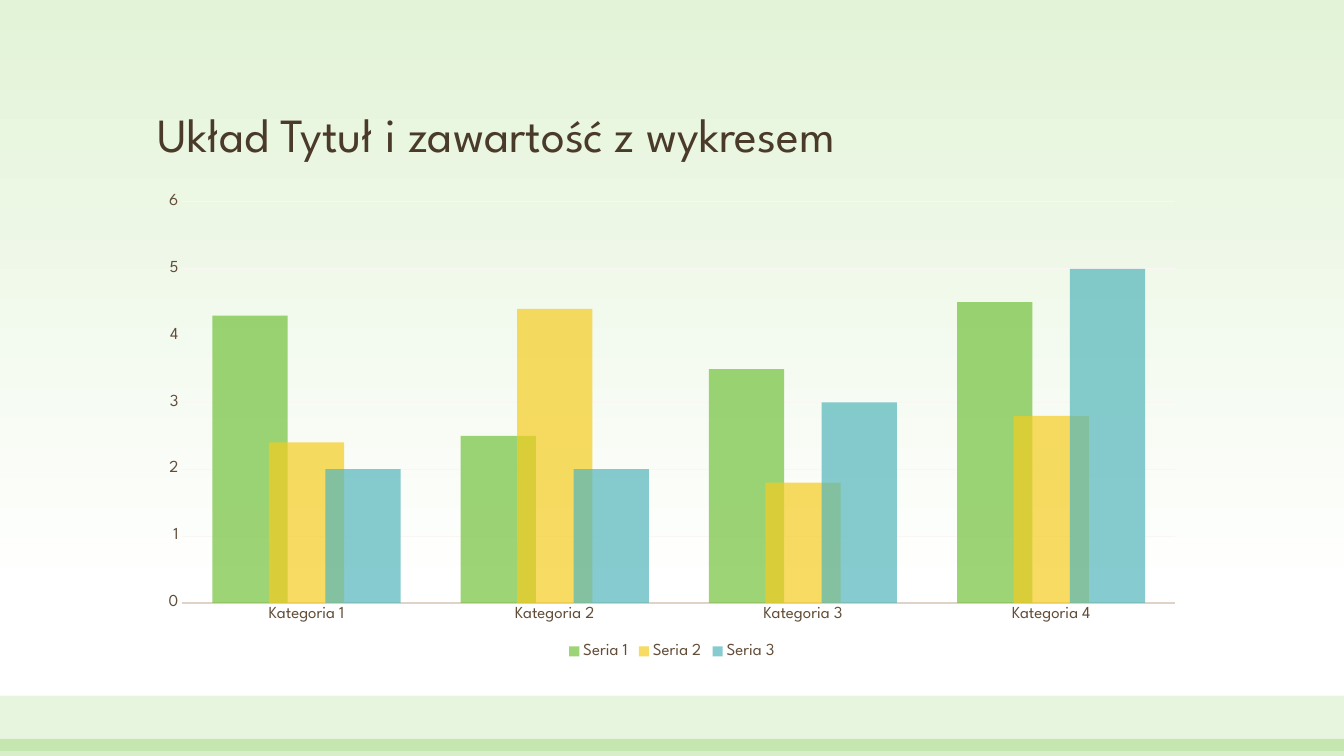
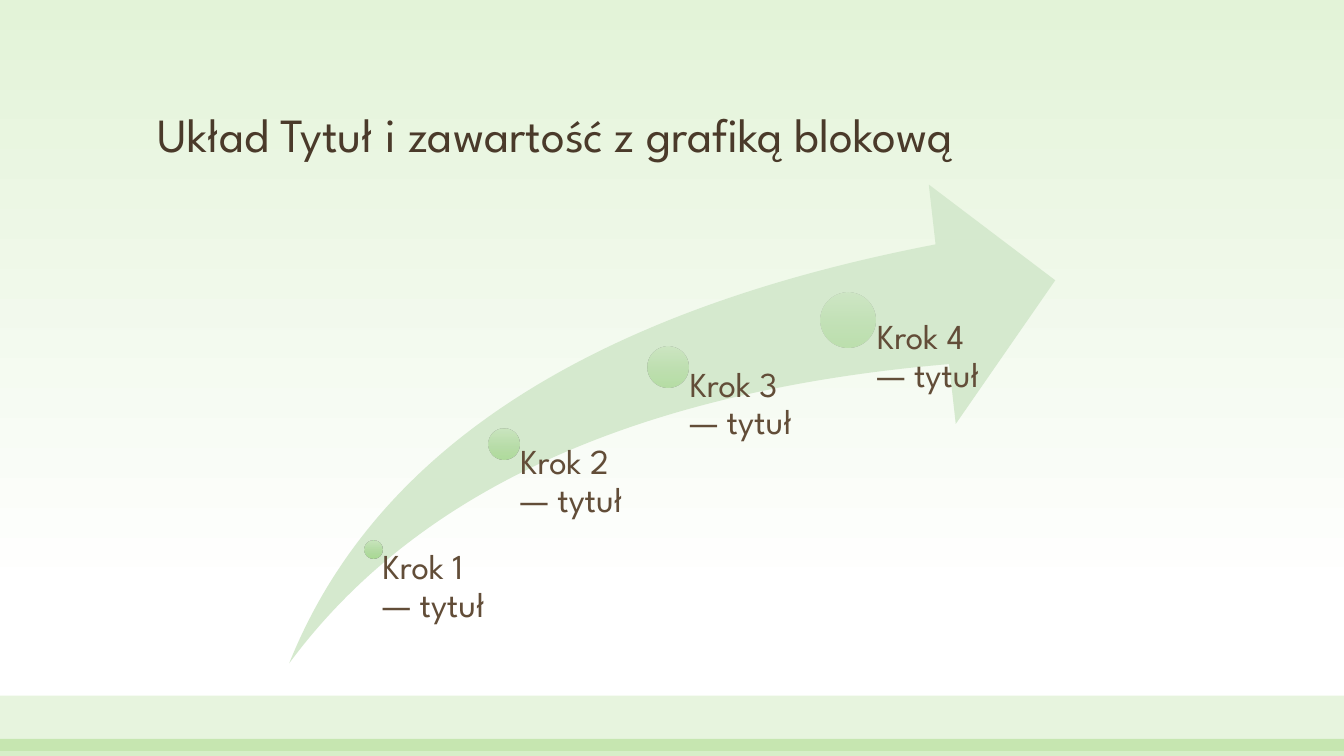
from lxml.etree import SubElement
from pptx import Presentation
from pptx.chart.data import CategoryChartData
from pptx.dml.color import RGBColor
from pptx.enum.chart import XL_CHART_TYPE as CHART, XL_LEGEND_POSITION as LEGEND, XL_TICK_MARK as TICK
from pptx.enum.shapes import MSO_SHAPE as SHAPE
from pptx.enum.text import MSO_ANCHOR as ANCHOR, PP_ALIGN as ALIGN
from pptx.oxml.ns import qn
from pptx.util import Pt

FONT = "League Spartan"
COLORS = {
    "title": "4A3A2A",
    "text": "624D38",
    "green": "72C23C",
    "yellow": "F4CC20",
    "teal": "53B6BB",
    "axis": "DFD2C6",
    "grid": "F9F6F4",
    "sky": "E3F3D8",
    "white": "FFFFFF",
    "arrow": "D5E9CE",
    "dot_top": "C8E5BC",
    "dot_middle": "B3DBA2",
    "dot_bottom": "A4D78D",
}
WIDTH, HEIGHT = 960, 540
LEFT, CONTENT_WIDTH = 105.5, 749
TOP, CONTENT_HEIGHT = 131.8, 342
BOTTOM = TOP + CONTENT_HEIGHT
LABEL_WIDTH = 78


def rgb(name):
    return RGBColor.from_string(COLORS[name])


def box(*lengths):
    return [Pt(n) for n in lengths]


def fade(element, opacity):
    """Give every RGB colour inside the element an opacity in percent."""
    for color in element.xpath(".//a:srgbClr"):
        SubElement(color, qn("a:alpha"), val=str(round(opacity * 1000)))


def fill_gradient(fill, element, stops):
    """Fill downwards; stops are (position, colour, opacity), in percent."""
    fill.gradient()
    fill.gradient_angle = 270
    gs_list = element.xpath(".//a:gradFill/a:gsLst")[0]
    for old in list(gs_list):
        gs_list.remove(old)
    for position, color, opacity in stops:
        gs = SubElement(gs_list, qn("a:gs"), pos=str(position * 1000))
        SubElement(gs, qn("a:srgbClr"), val=COLORS[color])
        fade(gs, opacity)


def write(tf, text, size=25, color="text", anchor=ANCHOR.TOP):
    tf.word_wrap = True
    tf.vertical_anchor = anchor
    p = tf.paragraphs[0]
    p.alignment = ALIGN.LEFT
    p.line_spacing = 0.9
    r = p.add_run()
    r.text = text
    style_font(r.font, size, color)


def style_font(font, size, color="text"):
    font.name = FONT
    font.size = Pt(size)
    font.bold = False
    font.color.rgb = rgb(color)


def add_shape(shapes, kind, lengths, color=None):
    sp = shapes.add_shape(kind, *box(*lengths))
    sp.shadow.inherit = False
    sp.line.fill.background()
    if color:
        sp.fill.solid()
        sp.fill.fore_color.rgb = rgb(color)
    return sp


def style_master(prs, layout):
    """Set the background and the title place for all slides."""
    master = prs.slide_master
    fill_gradient(master.background.fill, master.element,
                  [(0, "sky", 56), (79, "white", 100)])
    title = layout.placeholders[0]
    title.left, title.top, title.width, title.height = box(LEFT, 34.2, CONTENT_WIDTH, 85.7)


def add_bands(slide, master):
    """Draw the bands and move them to the master, behind its placeholders."""
    for i, (top, height, opacity) in enumerate([(496.8, 39.6, 17), (527.8, 12.2, 28)]):
        band = add_shape(slide.shapes, SHAPE.RECTANGLE, (0, top, WIDTH, height), "green")
        fade(band.element, opacity)
        band.element.nvSpPr.cNvPr.set("id", str(101 + i))
        master.shapes.element.insert(2 + i, band.element)


def add_slide(prs, layout, title):
    slide = prs.slides.add_slide(layout)
    write(slide.shapes.title.text_frame, title, size=34, color="title", anchor=ANCHOR.BOTTOM)
    return slide


def style_axis(axis):
    axis.major_tick_mark = axis.minor_tick_mark = TICK.NONE
    style_font(axis.tick_labels.font, 12)


def add_column_chart(slide, categories, series):
    """Add a column chart; series are (name, colour, values)."""
    data = CategoryChartData()
    data.categories = categories
    for name, _, values in series:
        data.add_series(name, values)
    chart = slide.shapes.add_chart(
        CHART.COLUMN_CLUSTERED, *box(LEFT, TOP, CONTENT_WIDTH, CONTENT_HEIGHT), data).chart
    style_font(chart.font, 10)
    chart.has_title = False

    plot = chart.plots[0]
    plot.vary_by_categories = False
    plot.gap_width, plot.overlap = 80, 25
    for columns, (_, color, _) in zip(plot.series, series):
        columns.invert_if_negative = False
        columns.format.fill.solid()
        columns.format.fill.fore_color.rgb = rgb(color)
    for ser in chart.element.xpath(".//c:ser"):
        fade(ser, 70)

    style_axis(chart.category_axis)
    line = chart.category_axis.format.line
    line.color.rgb, line.width = rgb("axis"), Pt(1.25)

    values_axis = chart.value_axis
    style_axis(values_axis)
    values_axis.minimum_scale, values_axis.maximum_scale = 0, 6
    values_axis.major_unit = 1
    values_axis.format.line.fill.background()
    grid = values_axis.major_gridlines.format.line
    grid.color.rgb, grid.width = rgb("grid"), Pt(0.75)

    chart.has_legend = True
    chart.legend.position = LEGEND.BOTTOM
    chart.legend.include_in_layout = False
    style_font(chart.legend.font, 12)


def add_step(shapes, text, x, y, size, opacity):
    """Add a dot centred on x, y and a label that starts at its centre."""
    dot = add_shape(shapes, SHAPE.OVAL, (x - size / 2, y - size / 2, size, size))
    fill_gradient(dot.fill, dot.element, [
        (0, "dot_top", opacity), (50, "dot_middle", opacity), (100, "dot_bottom", opacity)])
    indent = size * 0.53
    tf = shapes.add_textbox(*box(x, y, indent + LABEL_WIDTH, BOTTOM - y)).text_frame
    tf.margin_left = Pt(indent)
    tf.margin_top = tf.margin_right = tf.margin_bottom = 0
    write(tf, text)


def add_arrow_steps(slide, steps):
    """Add a rising arrow; steps are (text, x, y, dot size)."""
    shapes = slide.shapes.add_group_shape().shapes
    arrow = add_shape(shapes, SHAPE.SWOOSH_ARROW, (206.6, TOP, 547.2, CONTENT_HEIGHT), "arrow")
    arrow.adjustments[0] = arrow.adjustments[1] = 0.25
    for i, step in enumerate(steps):
        add_step(shapes, *step, opacity=90 - 40 * i / (len(steps) - 1))


def main():
    prs = Presentation()
    prs.slide_width, prs.slide_height = box(WIDTH, HEIGHT)
    layout = prs.slide_layouts.get_by_name("Title Only")
    style_master(prs, layout)

    slide = add_slide(prs, layout, "Układ Tytuł i zawartość z wykresem")
    add_bands(slide, prs.slide_master)
    add_column_chart(slide, [f"Kategoria {n}" for n in range(1, 5)], [
        ("Seria 1", "green", (4.3, 2.5, 3.5, 4.5)),
        ("Seria 2", "yellow", (2.4, 4.4, 1.8, 2.8)),
        ("Seria 3", "teal", (2, 2, 3, 5)),
    ])

    slide = add_slide(prs, layout, "Układ Tytuł i zawartość z grafiką blokową")
    add_arrow_steps(slide, [
        ("Krok 1 — tytuł", 266.5, 392.2, 12.6),
        ("Krok 2 — tytuł", 360, 317.4, 21.8),
        ("Krok 3 — tytuł", 477.2, 262, 29),
        ("Krok 4 — tytuł", 605.7, 228.4, 39),
    ])
    prs.save("out.pptx")


if __name__ == "__main__":
    main()
